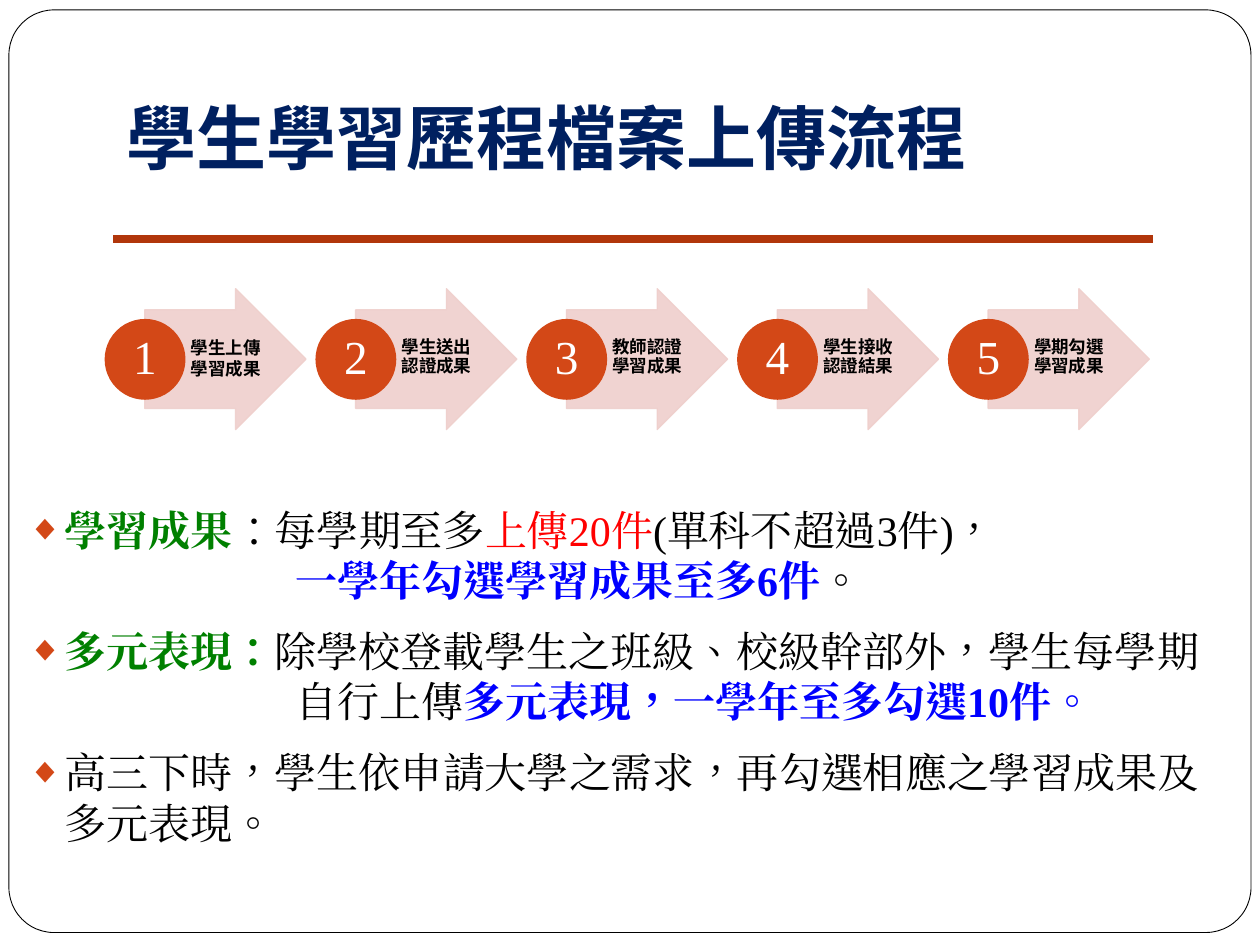
"""Build the slide on the upload process for student learning portfolios."""
from lxml import etree
from pptx import Presentation
from pptx.dml.color import RGBColor
from pptx.enum.shapes import MSO_CONNECTOR, MSO_SHAPE
from pptx.enum.text import MSO_ANCHOR, MSO_AUTO_SIZE, PP_ALIGN
from pptx.oxml.ns import qn
from pptx.util import Cm, Pt

ROUND_RECT = MSO_SHAPE.ROUNDED_RECTANGLE
ARROW = MSO_SHAPE.RIGHT_ARROW
OVAL = MSO_SHAPE.OVAL
STRAIGHT = MSO_CONNECTOR.STRAIGHT
MIDDLE, BOTTOM = MSO_ANCHOR.MIDDLE, MSO_ANCHOR.BOTTOM
LEFT, CENTER = PP_ALIGN.LEFT, PP_ALIGN.CENTER

COLORS = {
    "white": "FFFFFF", "black": "000000", "navy": "002060", "rust": "B1360B",
    "orange": "D34817", "pink": "EFCFCC", "green": "008000", "red": "FF0000",
    "blue": "0000FF",
}
STEPS = ["學生上傳學習成果", "學生送出認證成果", "教師認證學習成果",
         "學生接收認證結果", "學期勾選學習成果"]
BODY = [
    (True, [("學習成果", "green", True), ("：每學期至多", "black", False),
            ("上傳20件", "red", False), ("(單科不超過3件)，", "black", False)]),
    (False, [("一學年勾選學習成果至多6件", "blue", True), ("。", "black", False)]),
    (True, [("多元表現：", "green", True),
            ("除學校登載學生之班級、校級幹部外，學生每學期", "black", False)]),
    (False, [("自行上傳", "black", False),
             ("多元表現，一學年至多勾選10件。", "blue", True)]),
    (True, [("高三下時，學生依申請大學之需求，再勾選相應之學習成果及多元表現。",
             "black", False)]),
]


def style_run(r, size, font, color, bold=False):
    r.font.size = Pt(size)
    r.font.name = font
    r.font.bold = bold
    r.font.color.rgb = RGBColor.from_string(COLORS[color])
    rPr = r.font._element
    rPr.set("lang", "zh-TW")
    etree.SubElement(rPr, qn("a:ea")).set("typeface", font)


def set_frame(tf, anchor, left, top, right, bottom):
    tf.word_wrap = True
    tf.auto_size = MSO_AUTO_SIZE.NONE
    tf.vertical_anchor = anchor
    tf.margin_left, tf.margin_top = Cm(left), Cm(top)
    tf.margin_right, tf.margin_bottom = Cm(right), Cm(bottom)


prs = Presentation()
prs.slide_width, prs.slide_height = Cm(25.4), Cm(19.05)
s = prs.slides.add_slide(prs.slide_layouts[1])

frame = s.shapes.add_shape(ROUND_RECT, Cm(0.18), Cm(0.2), Cm(25.04), Cm(18.6))
frame.adjustments[0] = 0.049
frame.shadow.inherit = False
frame.fill.solid()
frame.fill.fore_color.rgb = RGBColor.from_string(COLORS["white"])
frame.line.color.rgb = RGBColor.from_string(COLORS["black"])
frame.line.width = Pt(0.5)
s.shapes._spTree.insert(2, frame._element)

rule = s.shapes.add_connector(STRAIGHT, Cm(2.28), Cm(4.82), Cm(23.24), Cm(4.82))
rule.line.color.rgb = RGBColor.from_string(COLORS["rust"])
rule.line.width = Pt(4.5)
etree.SubElement(rule._element.spPr, qn("a:effectLst"))

title = s.shapes.title
title.left, title.top, title.width, title.height = Cm(2.31), Cm(1.12), Cm(20.96), Cm(2.72)
tf = title.text_frame
tf.text = "學生學習歷程檔案上傳流程"
set_frame(tf, BOTTOM, 0.25, 0.13, 0.25, 0.25)
tf.paragraphs[0].alignment = LEFT
style_run(tf.paragraphs[0].runs[0], 40, "Roboto", "navy", True)

body = s.placeholders[1]
body.left, body.top, body.width, body.height = Cm(0.3), Cm(9.93), Cm(24.69), Cm(7.39)
tf = body.text_frame
set_frame(tf, MIDDLE, 0.25, 0.13, 0.25, 0.13)
for i, (bulleted, runs) in enumerate(BODY):
    p = tf.add_paragraph() if i else tf.paragraphs[0]
    p.alignment = LEFT
    p.space_before = Pt(5.8 if bulleted else 0)
    p.space_after = Pt(0 if bulleted else 6)
    pPr = p._p.get_or_add_pPr()
    pPr.set("marL", str(Cm(0.76 if bulleted else 5.4)))
    pPr.set("indent", str(Cm(-0.76 if bulleted else 0)))
    if bulleted:
        color = etree.SubElement(pPr, qn("a:buClr"))
        etree.SubElement(color, qn("a:srgbClr")).set("val", COLORS["orange"])
        etree.SubElement(pPr, qn("a:buSzPct")).set("val", "85000")
        etree.SubElement(pPr, qn("a:buChar")).set("char", "◆")
    else:
        etree.SubElement(pPr, qn("a:buNone"))
    for text, color, bold in runs:
        r = p.add_run()
        r.text = text
        style_run(r, 24, "Times New Roman", color, bold)

for i, step in enumerate(STEPS):
    x = 2.11 + i * 4.25
    arrow = s.shapes.add_shape(ARROW, Cm(x + 0.81), Cm(5.82), Cm(3.25), Cm(2.84))
    arrow.adjustments[0], arrow.adjustments[1] = 0.7, 0.5
    arrow.shadow.inherit = False
    arrow.fill.solid()
    arrow.fill.fore_color.rgb = RGBColor.from_string(COLORS["pink"])
    arrow.line.color.rgb = RGBColor.from_string(COLORS["pink"])
    arrow.line.width = Pt(0.75)
    for clr in arrow._element.spPr.iter(qn("a:srgbClr")):
        etree.SubElement(clr, qn("a:alpha")).set("val", "90000")

    label = s.shapes.add_textbox(Cm(x + 1.63), Cm(6.22), Cm(1.57), Cm(1.98))
    circle = s.shapes.add_shape(OVAL, Cm(x), Cm(6.43), Cm(1.63), Cm(1.63))
    circle.shadow.inherit = False
    circle.fill.solid()
    circle.fill.fore_color.rgb = RGBColor.from_string(COLORS["orange"])
    circle.line.fill.background()

    label.text_frame.text = step
    circle.text_frame.text = str(i + 1)
    set_frame(label.text_frame, MIDDLE, 0.08, 0.03, 0.03, 0.03)
    set_frame(circle.text_frame, MIDDLE, 0.05, 0.05, 0.05, 0.05)
    for sp, spacing in ((label, 0.9 if i else 1.0), (circle, 0.9)):
        p = sp.text_frame.paragraphs[0]
        p.alignment = CENTER
        p.line_spacing = spacing
    style_run(label.text_frame.paragraphs[0].runs[0], 10, "Noto Sans CJK SC", "black", True)
    style_run(circle.text_frame.paragraphs[0].runs[0], 27, "Times New Roman", "white")

prs.save("out.pptx")
